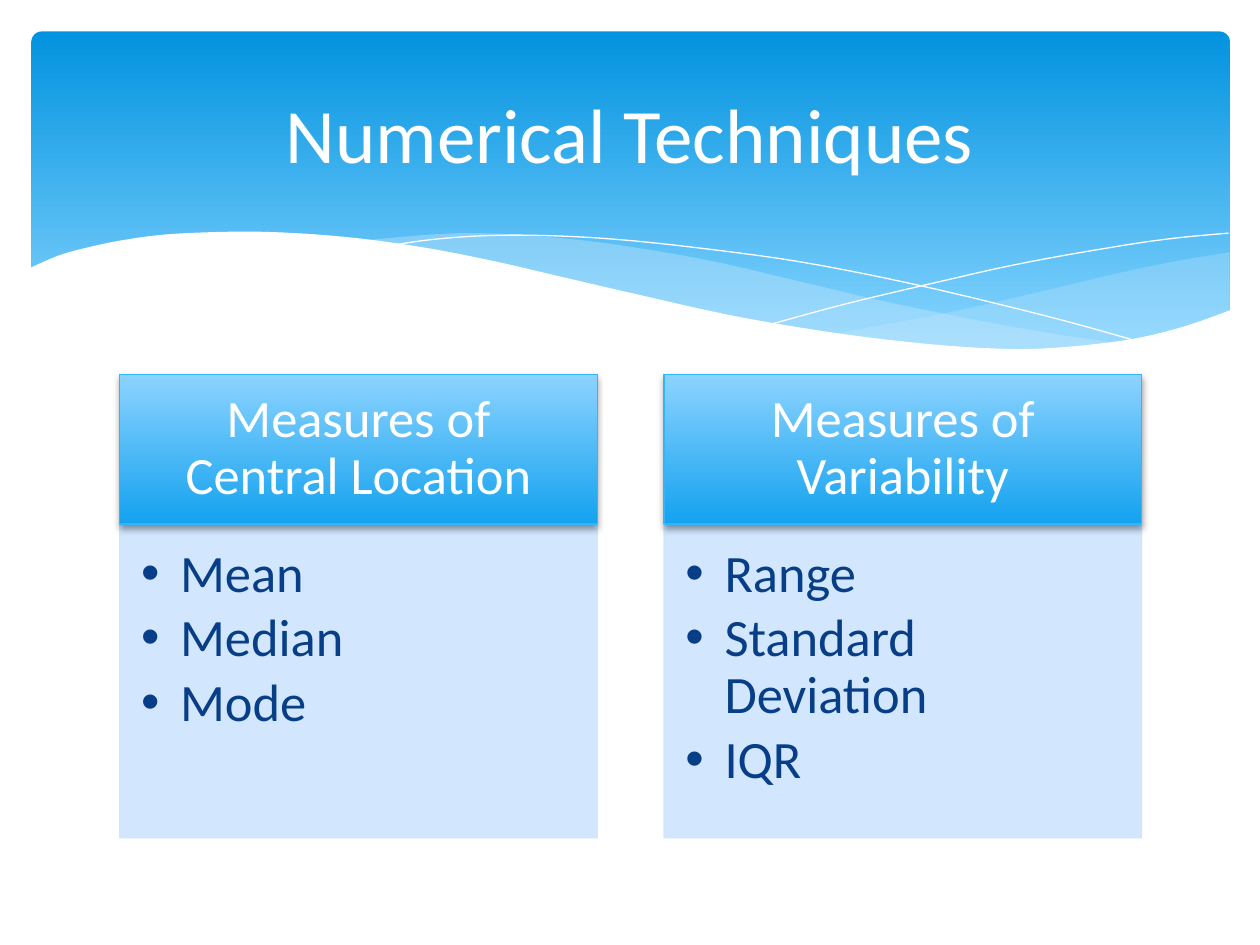
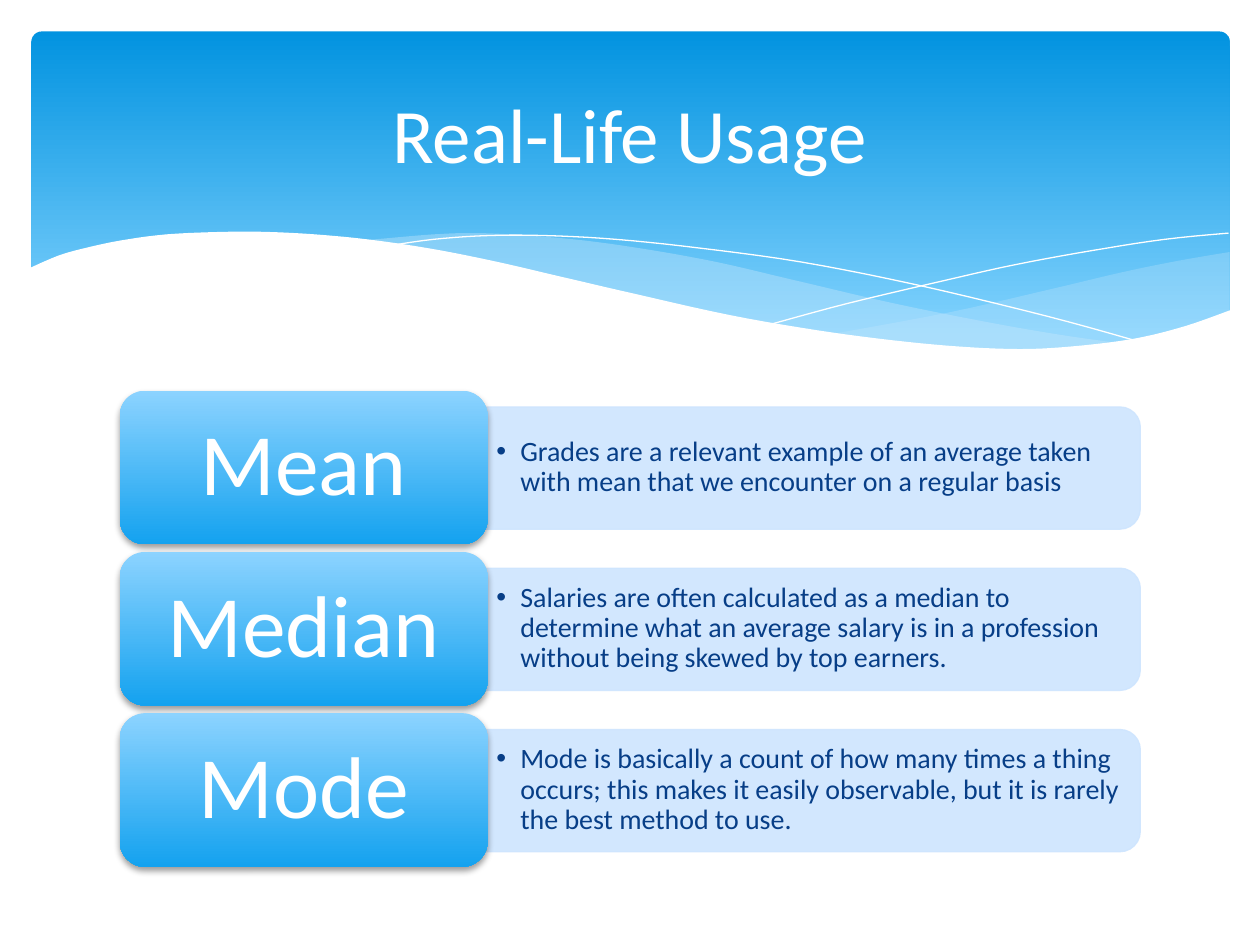
"""Build two slides on numerical techniques under a shared wave band."""
from dataclasses import dataclass

from lxml.etree import SubElement
from pptx import Presentation
from pptx.dml.color import RGBColor
from pptx.enum.shapes import MSO_SHAPE
from pptx.enum.text import MSO_ANCHOR, MSO_AUTO_SIZE, PP_ALIGN
from pptx.oxml.ns import qn
from pptx.util import Inches, Pt

RECT = MSO_SHAPE.RECTANGLE
ROUND = MSO_SHAPE.ROUNDED_RECTANGLE
TAB = MSO_SHAPE.ROUND_2_SAME_RECTANGLE
CENTER, LEFT = PP_ALIGN.CENTER, PP_ALIGN.LEFT
MIDDLE, TOP = MSO_ANCHOR.MIDDLE, MSO_ANCHOR.TOP
FIXED = MSO_AUTO_SIZE.NONE

FONT = "Calibri"
WHITE, NAVY, PALE, MIST, EDGE = "FFFFFF", "073E87", "CEE5FE", "C6E7FC", "31B6FD"
SKY = (("0293E0", 0), ("83D3FE", 0.9))
GLOSS = (("8CD3FF", 0), ("14A2EF", 1))

Point = tuple[float, float]
Stops = tuple[tuple[str, float], ...]


@dataclass
class Box:
    """A place and size in inches."""
    x: float
    y: float
    w: float
    h: float


@dataclass
class Style:
    """How a block of text looks; insets and indent are in inches."""
    size: int
    color: str
    insets: tuple[float, float, float, float]
    align: int = CENTER
    anchor: int = MIDDLE
    spacing: float = 0.9
    after: float = 0
    indent: float = 0


@dataclass
class Wave:
    """Smooth edges joined into an outline, filled or only drawn."""
    edges: list[list[Point]]
    fill: str = ""
    alpha: int = 100


@dataclass
class Card:
    """A heading with its list."""
    head: str
    items: list[str]


TITLE = Style(44, WHITE, (0.1, 0.05, 0.1, 0.05), spacing=1)
HEAD = Style(30, WHITE, (0.23, 0.13, 0.23, 0.13))
LIST = Style(30, NAVY, (0.17, 0.17, 0.23, 0.26), LEFT, TOP, after=4.5, indent=0.31)
NAME = Style(50, WHITE, (0.27, 0.16, 0.27, 0.16))
NOTE = Style(16, NAVY, (0.07, 0.03, 0.07, 0.03), LEFT, after=2.4, indent=0.19)

WAVES = [
    Wave([[(9.76, 2), (9.35, 2.07), (8.91, 2.16), (8.32, 2.3), (7.53, 2.48), (6.61, 2.65)],
          [(6.61, 2.65), (7.05, 2.71), (7.57, 2.76), (8.03, 2.78), (8.54, 2.76),
           (8.97, 2.7), (9.35, 2.62), (9.76, 2.47)]], MIST, 29),
    Wave([[(8.93, 2.73), (8.37, 2.65), (7.75, 2.54), (7.06, 2.4), (6.29, 2.22),
           (5.69, 2.08), (5.14, 1.98), (4.65, 1.91), (4.2, 1.87), (3.8, 1.85),
           (3.44, 1.86), (2.86, 1.91)],
          [(2.86, 1.91), (3.42, 1.99), (4.04, 2.11), (4.91, 2.32), (5.66, 2.48),
           (6.34, 2.61), (6.95, 2.7), (7.48, 2.76), (7.96, 2.78), (8.48, 2.77),
           (8.93, 2.73)]], MIST, 40),
    Wave([[(3.09, 1.95), (3.44, 1.9), (3.87, 1.87), (4.33, 1.87), (4.89, 1.9),
           (5.56, 1.97), (6.36, 2.08), (7.27, 2.26), (8.31, 2.51), (9.07, 2.72)]]),
    Wave([[(6.13, 2.57), (6.72, 2.41), (7.48, 2.23), (8.06, 2.1), (8.66, 1.99),
           (9.24, 1.9), (9.75, 1.85)]]),
    Wave([[(9.77, 2.46), (9.4, 2.59), (8.99, 2.69), (8.5, 2.75), (8.09, 2.77),
           (7.61, 2.75), (7.08, 2.7), (6.48, 2.62), (5.79, 2.5), (5.03, 2.33),
           (4.47, 2.2), (3.91, 2.07), (3.4, 1.97), (2.92, 1.9), (2.5, 1.86),
           (2.11, 1.84), (1.77, 1.84), (1.32, 1.86), (0.95, 1.91), (0.67, 1.97),
           (0.46, 2.03), (0.23, 2.13)],
          [(0.23, 3.29), (9.77, 3.29)]], WHITE),
]

CARDS = [
    Card("Measures of Central Location", ["Mean", "Median", "Mode"]),
    Card("Measures of Variability", ["Range", "Standard Deviation", "IQR"]),
]
USES = [
    Card("Mean", ["Grades are a relevant example of an average taken with mean "
                  "that we encounter on a regular basis"]),
    Card("Median", ["Salaries are often calculated as a median to determine what an "
                    "average salary is in a profession without being skewed by top "
                    "earners."]),
    Card("Mode", ["Mode is basically a count of how many times a thing occurs; this "
                  "makes it easily observable, but it is rarely the best method to "
                  "use."]),
]


def rgb(code: str) -> RGBColor:
    """Turn a hex string into a colour."""
    return RGBColor.from_string(code)


def tint(fill, code: str, alpha: int = 100) -> None:
    """Fill with one colour at an opacity in percent."""
    fill.solid()
    fill.fore_color.rgb = rgb(code)
    if alpha < 100:
        color = fill._xPr.find(f".//{qn('a:srgbClr')}")
        SubElement(color, qn("a:alpha"), val=str(alpha * 1000))


def shade(fill, stops: Stops) -> None:
    """Fill with a gradient that runs from top to bottom."""
    fill.gradient()
    fill.gradient_angle = 270
    for stop, (code, spot) in zip(fill.gradient_stops, stops):
        stop.color.rgb = rgb(code)
        stop.position = spot


def glow(shape) -> None:
    """Drop a soft shadow straight below a shape."""
    list_ = shape.element.spPr.find(qn("a:effectLst"))
    drop = SubElement(list_, qn("a:outerShdw"), blurRad=str(Pt(4)), dist=str(Pt(2)),
                      dir="5400000", rotWithShape="0")
    color = SubElement(drop, qn("a:srgbClr"), val="000000")
    SubElement(color, qn("a:alpha"), val="38000")


def place(shape, box: Box) -> None:
    """Move a shape to a box."""
    shape.left, shape.top = Inches(box.x), Inches(box.y)
    shape.width, shape.height = Inches(box.w), Inches(box.h)


def block(slide, kind: int, box: Box):
    """Add a preset shape without line or shadow."""
    shape = slide.shapes.add_shape(kind, 0, 0, 0, 0)
    place(shape, box)
    shape.shadow.inherit = False
    shape.line.fill.background()
    return shape


def panel(shape) -> None:
    """Give a shape the pale fill and edge."""
    tint(shape.fill, PALE, 90)
    tint(shape.line.fill, PALE, 90)
    shape.line.width = Pt(0.75)


def write(shape, lines: list[str], style: Style) -> None:
    """Set the lines of a shape, with bullets when the style is indented."""
    frame = shape.text_frame
    frame.text = "\n".join(lines)
    frame.word_wrap, frame.auto_size = True, FIXED
    frame.vertical_anchor = style.anchor
    (frame.margin_left, frame.margin_top,
     frame.margin_right, frame.margin_bottom) = map(Inches, style.insets)
    for para in frame.paragraphs:
        para.alignment, para.line_spacing = style.align, style.spacing
        para.space_before, para.space_after = Pt(0), Pt(style.after)
        if style.indent:
            props = para._p.get_or_add_pPr()
            props.set("marL", str(Inches(style.indent)))
            props.set("indent", str(-Inches(style.indent)))
            SubElement(props, qn("a:buFont"), typeface="Arial")
            SubElement(props, qn("a:buChar"), char="•")
        for run in para.runs:
            run.font.name, run.font.size = FONT, Pt(style.size)
            run.font.color.rgb = rgb(style.color)


def smooth(knots: list[Point], steps: int = 5) -> list[Point]:
    """Run a Catmull-Rom curve through the knots."""
    ends = [knots[0], *knots, knots[-1]]
    track = [knots[0]]
    for a, b, c, d in zip(ends, ends[1:], ends[2:], ends[3:]):
        for step in range(1, steps + 1):
            t = step / steps
            track.append(tuple(
                q + t * (r - p + t * (2 * p - 5 * q + 4 * r - s
                                      + t * (3 * q - p - 3 * r + s))) / 2
                for p, q, r, s in zip(a, b, c, d)))
    return track


def ripple(slide, wave: Wave) -> None:
    """Draw one wave of the band."""
    track = [(Inches(x), Inches(y)) for edge in wave.edges for x, y in smooth(edge)]
    pen = slide.shapes.build_freeform(*track[0])
    pen.add_line_segments(track[1:], close=bool(wave.fill))
    shape = pen.convert_to_shape()
    shape.shadow.inherit = False
    if wave.fill:
        tint(shape.fill, wave.fill, wave.alpha)
        shape.line.fill.background()
    else:
        shape.fill.background()
        tint(shape.line.fill, WHITE)
        shape.line.width = Pt(0)


def start(deck, layout: int, title: str):
    """Add a slide with the band and its title."""
    slide = deck.slides.add_slide(deck.slide_layouts[layout])
    band = block(slide, ROUND, Box(0.25, 0.25, 9.51, 2.7))
    band.adjustments[0] = 0.03
    shade(band.fill, SKY)
    for wave in WAVES:
        ripple(slide, wave)
    for holder in list(slide.placeholders):
        slide.shapes.element.append(holder.element)
    place(slide.shapes.title, Box(0.5, 0.37, 9, 1.37))
    write(slide.shapes.title, [title], TITLE)
    return slide


def methods(deck) -> None:
    """Show the two families of measures side by side."""
    slide = start(deck, 3, "Numerical Techniques")
    for col, card in enumerate(CARDS):
        x = 0.95 + 4.32 * col
        head = block(slide, RECT, Box(x, 2.97, 3.79, 1.19))
        shade(head.fill, GLOSS)
        tint(head.line.fill, EDGE)
        head.line.width = Pt(0.75)
        glow(head)
        write(head, [card.head], HEAD)
        body = slide.placeholders[col + 1]
        place(body, Box(x, 4.17, 3.79, 2.48))
        panel(body)
        write(body, card.items, LIST)


def usage(deck) -> None:
    """Show a row with an everyday use for each average."""
    slide = start(deck, 5, "Real-Life Usage")
    for row, use in enumerate(USES):
        y = 3.1 + 1.28 * row
        tab = block(slide, TAB, Box(5.97, y - 1.98, 0.97, 5.19))
        tab.rotation = 90
        panel(tab)
        note = slide.shapes.add_textbox(0, 0, 0, 0)
        place(note, Box(3.87, y + 0.17, 5.14, 0.88))
        write(note, use.items, NOTE)
        name = block(slide, ROUND, Box(0.95, y, 2.92, 1.22))
        shade(name.fill, GLOSS)
        glow(name)
        write(name, [use.head], NAME)


def main() -> None:
    """Build and save the deck."""
    deck = Presentation()
    deck.slide_width, deck.slide_height = Inches(10), Inches(7.5)
    methods(deck)
    usage(deck)
    deck.save("out.pptx")


if __name__ == "__main__":
    main()
